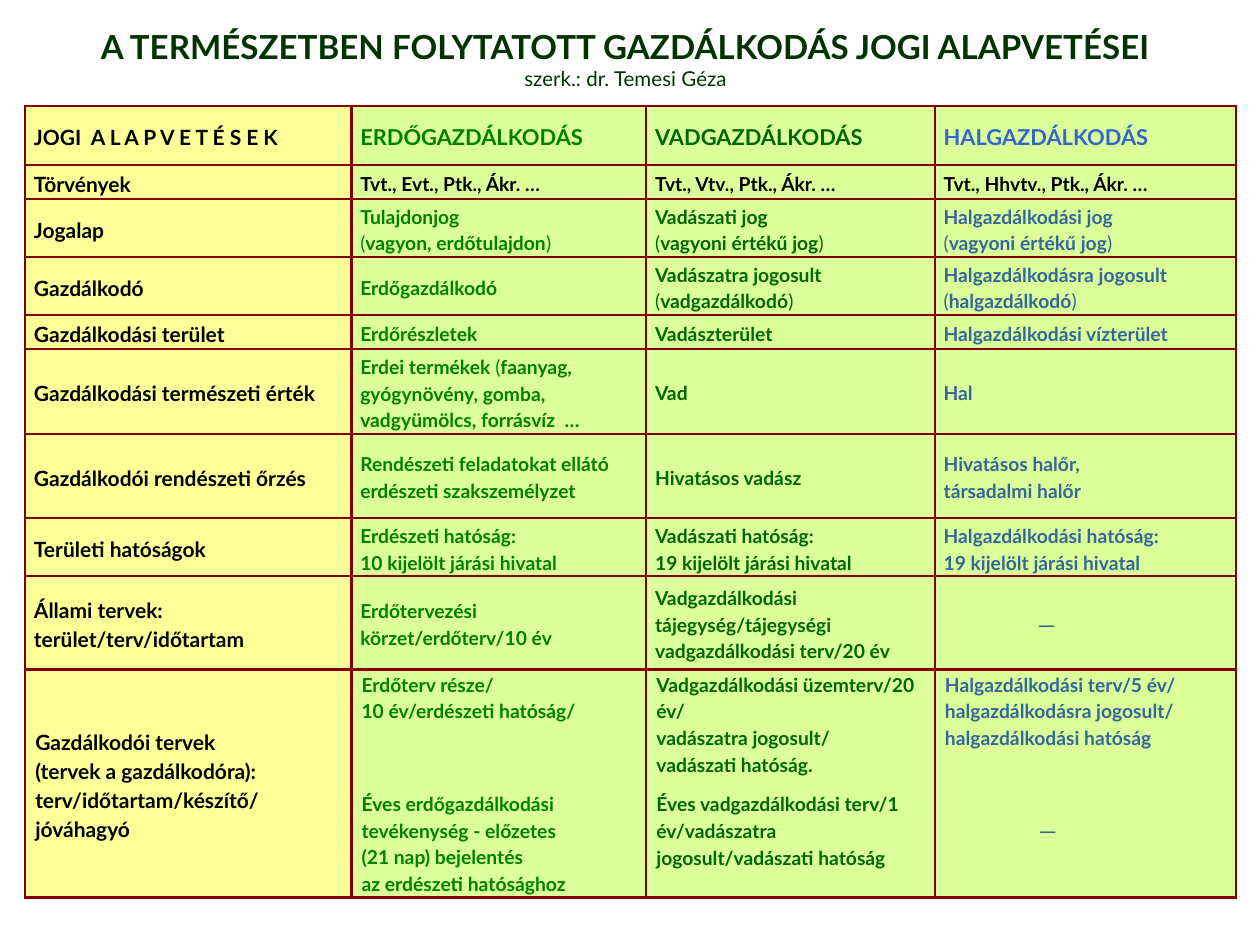
import lxml.etree
import pptx
import pptx.dml.color
import pptx.enum.text
import pptx.oxml.ns
import pptx.util

Inches, Pt = pptx.util.Inches, pptx.util.Pt
ALIGN, ANCHOR = pptx.enum.text.PP_ALIGN, pptx.enum.text.MSO_ANCHOR

# Content: one line of text is one paragraph
TITLE = "A TERMÉSZETBEN FOLYTATOTT GAZDÁLKODÁS JOGI ALAPVETÉSEI"
SUBTITLE = "szerk.: dr. Temesi Géza"
ROWS = [
    ("JOGI  A L A P V E T É S E K", "ERDŐGAZDÁLKODÁS", "VADGAZDÁLKODÁS", "HALGAZDÁLKODÁS"),
    ("Törvények", "Tvt., Evt., Ptk., Ákr. …", "Tvt., Vtv., Ptk., Ákr. …",
     "Tvt., Hhvtv., Ptk., Ákr. …"),
    ("Jogalap", "Tulajdonjog\n(vagyon, erdőtulajdon)", "Vadászati jog\n(vagyoni értékű jog)",
     "Halgazdálkodási jog\n(vagyoni értékű jog)"),
    ("Gazdálkodó", "Erdőgazdálkodó", "Vadászatra jogosult\n(vadgazdálkodó)",
     "Halgazdálkodásra jogosult (halgazdálkodó)"),
    ("Gazdálkodási terület", "Erdőrészletek", "Vadászterület", "Halgazdálkodási vízterület"),
    ("Gazdálkodási természeti érték",
     "Erdei termékek (faanyag, gyógynövény, gomba, vadgyümölcs, forrásvíz  …", "Vad", "Hal"),
    ("Gazdálkodói rendészeti őrzés", "Rendészeti feladatokat ellátó erdészeti szakszemélyzet",
     "Hivatásos vadász", "Hivatásos halőr,\ntársadalmi halőr"),
    ("Területi hatóságok", "Erdészeti hatóság:\n10 kijelölt járási hivatal",
     "Vadászati hatóság:\n19 kijelölt járási hivatal",
     "Halgazdálkodási hatóság:\n19 kijelölt járási hivatal"),
    ("Állami tervek:\nterület/terv/időtartam", "Erdőtervezési körzet/erdőterv/10 év",
     "Vadgazdálkodási tájegység/tájegységi vadgazdálkodási terv/20 év", "─"),
    ("Gazdálkodói tervek\n(tervek a gazdálkodóra):\nterv/időtartam/készítő/\njóváhagyó",
     "Erdőterv része/\n10 év/erdészeti hatóság/\n"
     "Éves erdőgazdálkodási tevékenység - előzetes\n(21 nap) bejelentés\naz erdészeti hatósághoz",
     "Vadgazdálkodási üzemterv/20 év/\nvadászatra jogosult/\nvadászati hatóság.\n"
     "Éves vadgazdálkodási terv/1 év/vadászatra jogosult/vadászati hatóság",
     "Halgazdálkodási terv/5 év/\nhalgazdálkodásra jogosult/\nhalgazdálkodási hatóság\n─"),
]
COL_WIDTHS = [2.59, 2.34, 2.29, 2.39]
ROW_HEIGHTS = [0.47, 0.27, 0.46, 0.46, 0.27, 0.67, 0.67, 0.46, 0.74, 1.81]
LAWS, PLANS = 1, 9
LIGHT_PAREN_ROWS = (2, 3, 5)
# Space before the annual plan: column -> (paragraph, points)
PLAN_GAPS = {1: (2, 37.5), 2: (3, 7), 3: (3, 37.5)}
DASH_INDENT = 0.76

THEME = {
    "font": "Lato", "title": "003300", "border": "800000", "black": "000000",
    "label_fill": "FFFF99", "body_fill": "DBFF99",
    "head": ["000000", "008000", "006600", "3366CC"],
    "body": ["000000", "008000", "006600", "336699"],
    "title_size": 18.9, "subtitle_size": 11.7,
    "label_size": 12, "head_size": 12.5, "body_size": 11,
    "border_width": 1.5, "line_spacing": 1.15,
}


def rgb(value):
    return pptx.dml.color.RGBColor.from_string(value)


def set_all(obj, values):
    for name, value in values.items():
        setattr(obj, name, value)


def add_run(p, text, size, color, bold=True):
    r = p.add_run()
    r.text = text
    set_all(r.font, {"name": THEME["font"], "size": Pt(size), "bold": bold})
    r.font.color.rgb = rgb(color)


def add_border(cell):
    tc_pr = cell._tc.get_or_add_tcPr()
    qn = pptx.oxml.ns.qn
    for side in ("lnL", "lnR", "lnT", "lnB"):
        ln = lxml.etree.SubElement(tc_pr, qn("a:" + side), w=str(Pt(THEME["border_width"])))
        fill = lxml.etree.SubElement(ln, qn("a:solidFill"))
        lxml.etree.SubElement(fill, qn("a:srgbClr"), val=THEME["border"])


def split_parens(text):
    """Give (piece, is_bold) pairs with each parenthesis on its own."""
    pieces = text.replace("(", "\n(\n").replace(")", "\n)\n").split("\n")
    return [(piece, piece not in "()") for piece in pieces if piece]


def cell_style(row, col):
    """Give the type size and colour of a cell."""
    if col == 0:
        return THEME["label_size"], THEME["black"]
    if row == 0:
        return THEME["head_size"], THEME["head"][col]
    return THEME["body_size"], THEME["black"] if row == LAWS else THEME["body"][col]


def fill_cell(cell, row, col, text):
    add_border(cell)
    cell.fill.solid()
    cell.fill.fore_color.rgb = rgb(THEME["body_fill" if col else "label_fill"])
    side, end = (0.08, 0) if row == PLANS else (0.07, 0.02)
    top_text = row == PLANS and col > 0
    set_all(cell, {
        "margin_left": Inches(side), "margin_right": Inches(side),
        "margin_top": Inches(end), "margin_bottom": Inches(end),
        "vertical_anchor": ANCHOR.TOP if top_text else ANCHOR.MIDDLE,
    })
    size, color = cell_style(row, col)
    tf = cell.text_frame
    for i, line in enumerate(text.split("\n")):
        p = tf.paragraphs[0] if i == 0 else tf.add_paragraph()
        p.line_spacing = THEME["line_spacing"]
        if row == PLANS and col in PLAN_GAPS and PLAN_GAPS[col][0] == i:
            p.space_before = Pt(PLAN_GAPS[col][1])
        if line == "─":
            p._p.get_or_add_pPr().set("marL", str(Inches(DASH_INDENT)))
        pieces = split_parens(line) if row in LIGHT_PAREN_ROWS else [(line, True)]
        for piece, bold in pieces:
            add_run(p, piece, size, color, bold)


def add_title(slide):
    sp = slide.shapes.add_textbox(Inches(0.28), Inches(0.21), Inches(9.37), Inches(0.52))
    tf = sp.text_frame
    set_all(tf, {"word_wrap": True, "margin_left": 0, "margin_right": 0,
                 "margin_top": 0, "margin_bottom": 0})
    lines = [(TITLE, THEME["title_size"], True), (SUBTITLE, THEME["subtitle_size"], False)]
    for i, (text, size, bold) in enumerate(lines):
        p = tf.paragraphs[0] if i == 0 else tf.add_paragraph()
        p.alignment = ALIGN.CENTER
        add_run(p, text, size, THEME["title"], bold)


def add_law_table(slide):
    frame = slide.shapes.add_table(
        len(ROWS), len(COL_WIDTHS), Inches(0.2), Inches(0.84),
        Inches(sum(COL_WIDTHS)), Inches(sum(ROW_HEIGHTS)))
    table = frame.table
    set_all(table, {"first_row": False, "horz_banding": False})
    for column, width in zip(table.columns, COL_WIDTHS):
        column.width = Inches(width)
    for table_row, height in zip(table.rows, ROW_HEIGHTS):
        table_row.height = Inches(height)
    for row, texts in enumerate(ROWS):
        for col, text in enumerate(texts):
            fill_cell(table.cell(row, col), row, col, text)


def main():
    prs = pptx.Presentation()
    set_all(prs, {"slide_width": Inches(10), "slide_height": Inches(7.5)})
    slide = prs.slides.add_slide(prs.slide_layouts[6])
    add_title(slide)
    add_law_table(slide)
    prs.save("out.pptx")


if __name__ == "__main__":
    main()
